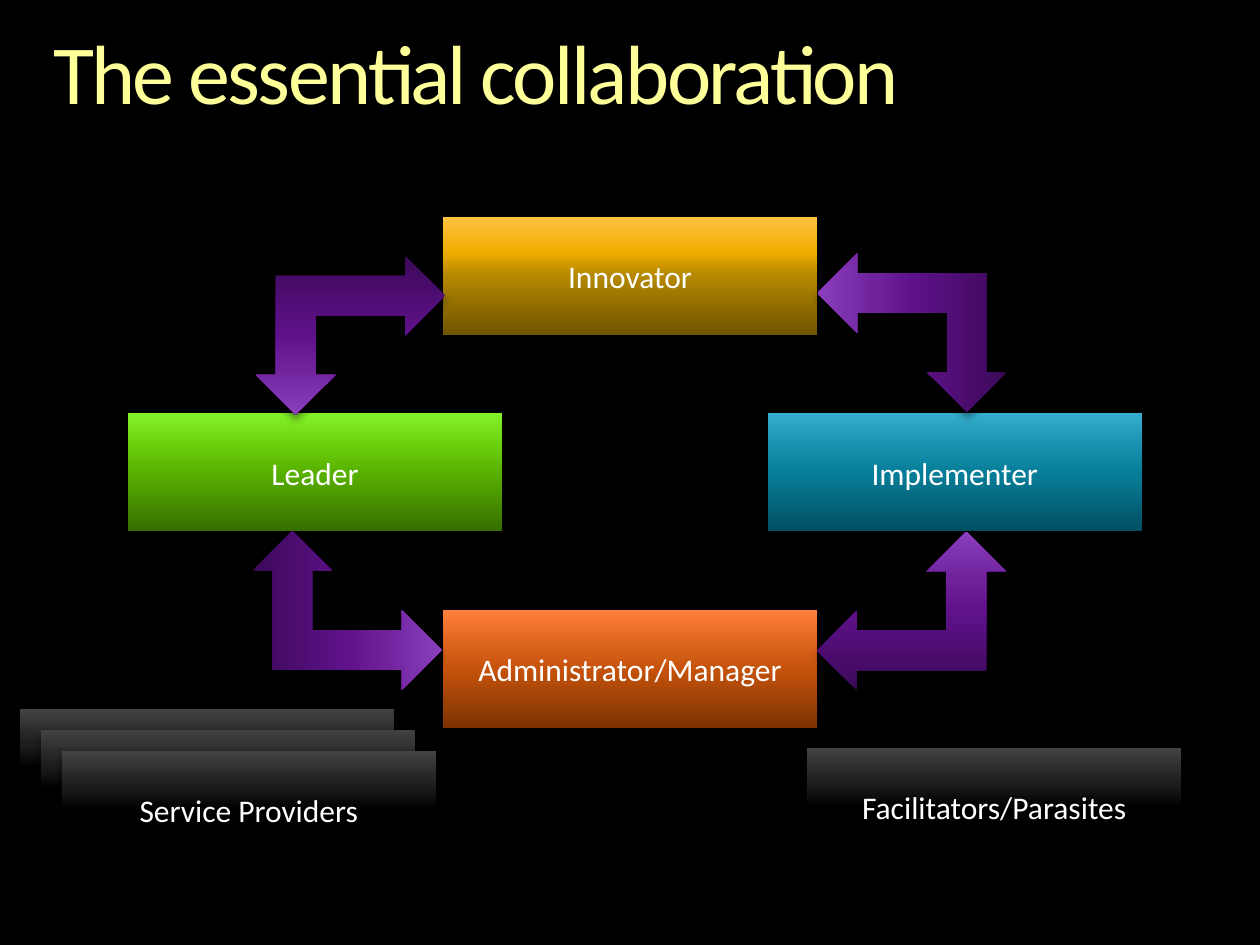
from pptx import Presentation
from pptx.dml.color import RGBColor
from pptx.enum.shapes import MSO_SHAPE
from pptx.enum.text import MSO_ANCHOR, PP_ALIGN
from pptx.oxml import parse_xml
from pptx.oxml.ns import nsdecls
from pptx.util import Inches, Pt

RECT, ARROW = MSO_SHAPE.RECTANGLE, MSO_SHAPE.LEFT_UP_ARROW
LEFT, CENTER = PP_ALIGN.LEFT, PP_ALIGN.CENTER
TOP, MIDDLE = MSO_ANCHOR.TOP, MSO_ANCHOR.MIDDLE

BLACK = RGBColor(0x00, 0x00, 0x00)
WHITE = RGBColor(0xFF, 0xFF, 0xFF)
YELLOW = RGBColor(0xFF, 0xFF, 0x99)
GOLD = [RGBColor(0x70, 0x54, 0x00), RGBColor(0xB4, 0x88, 0x00),
        RGBColor(0xF0, 0xAC, 0x00), RGBColor(0xFF, 0xC3, 0x42)]
TEAL = [RGBColor(0x01, 0x50, 0x62), RGBColor(0x07, 0x7E, 0x99),
        RGBColor(0x17, 0x8E, 0xAB), RGBColor(0x35, 0xAD, 0xCE)]
ORANGE = [RGBColor(0x7D, 0x32, 0x03), RGBColor(0xC4, 0x52, 0x0B),
          RGBColor(0xDB, 0x63, 0x1C), RGBColor(0xFF, 0x80, 0x3C)]
GREEN = [RGBColor(0x37, 0x6E, 0x00), RGBColor(0x58, 0xB1, 0x00),
         RGBColor(0x68, 0xCC, 0x0B), RGBColor(0x83, 0xF2, 0x29)]
PURPLE = [RGBColor(0x3C, 0x09, 0x58), RGBColor(0x5F, 0x12, 0x8B),
          RGBColor(0x6F, 0x22, 0x9C), RGBColor(0x8B, 0x3F, 0xBD)]
GREY = [BLACK, BLACK, RGBColor(0x1D, 0x1D, 0x1D), RGBColor(0x42, 0x42, 0x42)]
STOPS = [0, 50, 70, 100]

prs = Presentation()
prs.slide_width, prs.slide_height = Inches(10), Inches(7.5)
CELL = prs.slide_width / 64
BOX_W, BOX_H = 19, 6
ARROW_W, ARROW_H = 9.6, 8.06

slide = prs.slides.add_slide(prs.slide_layouts[6])
slide.background.fill.solid()
slide.background.fill.fore_color.rgb = BLACK


def write(s, text, size=18, color=WHITE, align=CENTER, anchor=MIDDLE, wrap=False):
    tf = s.text_frame
    tf.word_wrap, tf.vertical_anchor = wrap, anchor
    p = tf.paragraphs[0]
    p.alignment = align
    r = p.add_run()
    r.text = text
    r.font.name, r.font.size = "Calibri", Pt(size)
    r.font.color.rgb = color
    return p, r


def add_glossy(shapes, kind, col, row, cols, rows, colors, rotation=0):
    s = shapes.add_shape(kind, *(round(n * CELL) for n in (col, row, cols, rows)))
    s.rotation = rotation
    s.line.fill.background()
    stops = "".join(f'<a:gs pos="{pos * 1000}"><a:srgbClr val="{c}"/></a:gs>'
                    for pos, c in zip(STOPS, colors))
    spPr = s._element.spPr
    spPr.insert(2, parse_xml(
        f'<a:gradFill {nsdecls("a")} rotWithShape="1"><a:gsLst>{stops}</a:gsLst>'
        '<a:lin ang="16200000" scaled="0"/></a:gradFill>'))
    spPr.append(parse_xml(
        f'<a:effectLst {nsdecls("a")}><a:outerShdw blurRad="{Pt(5)}" dist="{Pt(3)}" '
        'dir="5400000" rotWithShape="0"><a:srgbClr val="000000">'
        '<a:alpha val="45000"/></a:srgbClr></a:outerShdw></a:effectLst>'))
    return s


title = slide.shapes.add_textbox(*(round(n * CELL) for n in (2.7, 1.6, 58.7, 4.7)))
tf = title.text_frame
tf.margin_left = tf.margin_right = tf.margin_top = tf.margin_bottom = 0
p, r = write(title, "The essential collaboration", size=48, color=YELLOW,
             align=LEFT, anchor=TOP, wrap=True)
p.line_spacing = 0.9
r.font._element.set("spc", "-150")

for text, col, row, colors in [
    ("Innovator", 22.5, 11, GOLD),
    ("Implementer", 39, 21, TEAL),
    ("Administrator/Manager", 22.5, 31, ORANGE),
    ("Leader", 6.5, 21, GREEN),
]:
    write(add_glossy(slide.shapes, RECT, col, row, BOX_W, BOX_H, colors), text)

for col, row, cols, rows, rotation in [
    (41.5, 27, ARROW_W, ARROW_H, 0),
    (13, 13, ARROW_W, ARROW_H, 180),
    (42.3, 12.1, ARROW_H, ARROW_W, 270),
    (13.6, 26.2, ARROW_H, ARROW_W, 90),
]:
    add_glossy(slide.shapes, ARROW, col, row, cols, rows, PURPLE, rotation)

stack = slide.shapes.add_group_shape()
for i in range(3):
    s = add_glossy(stack.shapes, RECT, 1 + 1.07 * i, 36 + 1.07 * i, BOX_W, BOX_H, GREY)
write(s, "Service Providers")

s = add_glossy(slide.shapes, RECT, 41, 38, BOX_W, BOX_H, GREY)
write(s, "Facilitators/Parasites")

prs.save("out.pptx")
